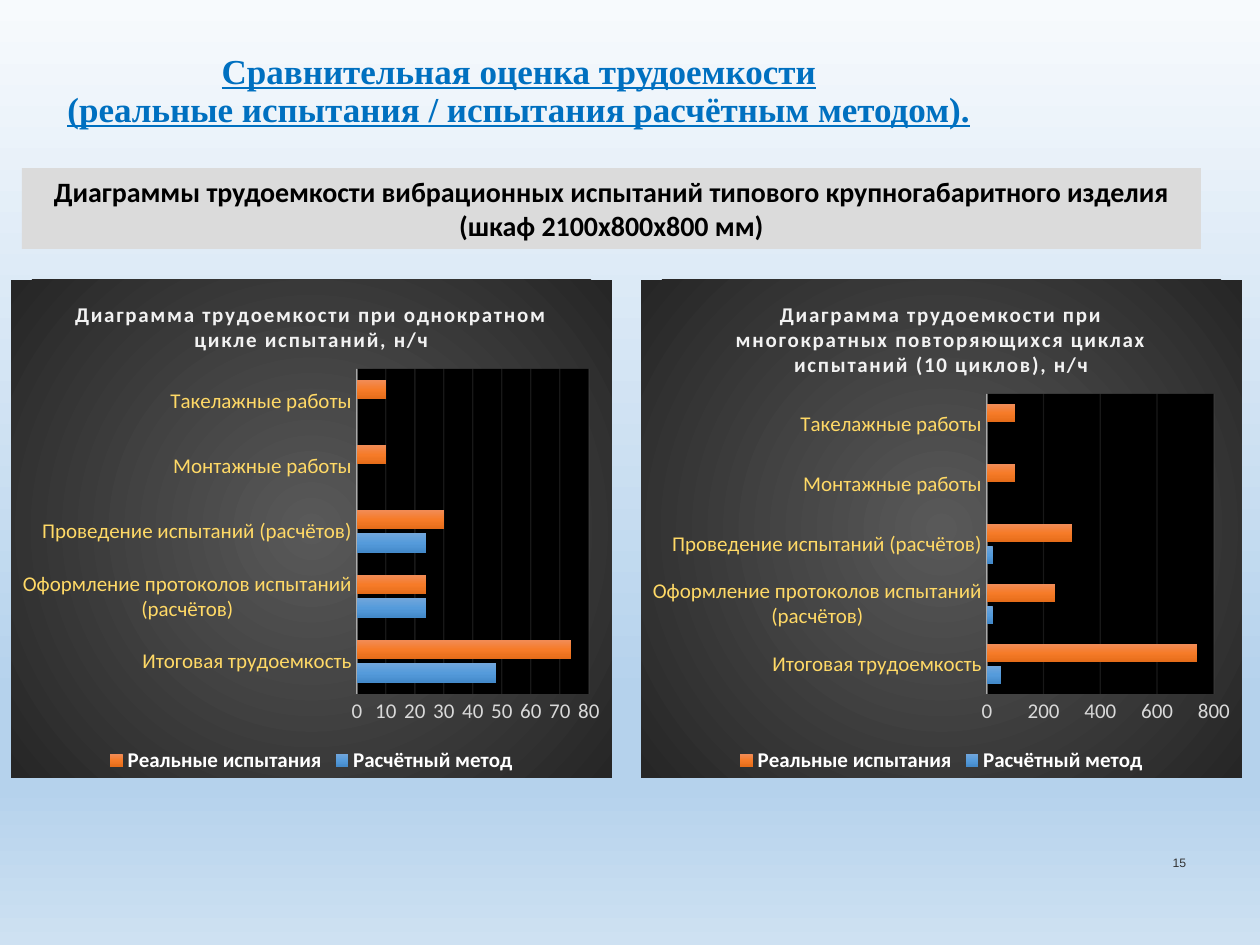
from lxml import etree
from pptx import Presentation
from pptx.chart.data import CategoryChartData
from pptx.dml.color import RGBColor
from pptx.enum.chart import XL_CHART_TYPE, XL_LEGEND_POSITION, XL_TICK_MARK
from pptx.enum.shapes import MSO_SHAPE
from pptx.enum.text import MSO_ANCHOR, PP_ALIGN
from pptx.oxml import parse_xml
from pptx.oxml.ns import nsdecls, qn
from pptx.util import Pt

PX = 7257.14  # EMU per px, 126 px to the inch
BAR = XL_CHART_TYPE.BAR_CLUSTERED
BOTTOM = XL_LEGEND_POSITION.BOTTOM
NO_TICK = XL_TICK_MARK.NONE
CENTER, RIGHT = PP_ALIGN.CENTER, PP_ALIGN.RIGHT
color = RGBColor.from_string


def box(*lengths):
    return [round(length * PX) for length in lengths]


def set_gradient(parent, stops, shade):
    """Replace the solid fill of a properties element with a gradient."""
    stop_xml = "".join(
        f'<a:gs pos="{position * 1000}"><a:srgbClr val="{value}"/></a:gs>'
        for position, value in stops)
    gradient = parse_xml(f'<a:gradFill {nsdecls("a")} rotWithShape="1">'
                         f'<a:gsLst>{stop_xml}</a:gsLst>{shade}</a:gradFill>')
    parent.replace(parent.find(qn("a:solidFill")), gradient)


DOWN = '<a:lin ang="5400000" scaled="0"/>'
RADIAL = ('<a:path path="circle"><a:fillToRect l="50000" t="50000" '
          'r="50000" b="50000"/></a:path>')

presentation = Presentation()
presentation.slide_width, presentation.slide_height = box(1260, 945)
slide = presentation.slides.add_slide(presentation.slide_layouts[5])

# Background
slide.background.fill.solid()
slide.background.fill.fore_color.rgb = color("B5D2EC")
set_gradient(slide.element.find(".//" + qn("p:bgPr")),
             [(0, "F7FAFD"), (74, "B5D2EC"), (83, "B5D2EC"), (100, "CEE1F2")], DOWN)

# Title
title = slide.shapes.title
title.left, title.top, title.width, title.height = box(30, 50, 978, 117)
frame = title.text_frame
frame.word_wrap = True
frame.vertical_anchor = MSO_ANCHOR.TOP
frame.margin_left = frame.margin_right = frame.margin_bottom = 0
frame.margin_top = box(4)[0]
paragraph = frame.paragraphs[0]
paragraph.alignment = CENTER
paragraph.line_spacing = 0.9
for index, line in enumerate(["Сравнительная оценка трудоемкости",
                              "(реальные испытания / испытания расчётным методом)."]):
    if index:
        paragraph.add_line_break()
    run = paragraph.add_run()
    run.text = line
    run.font.name, run.font.size = "Times New Roman", Pt(20)
    run.font.bold = run.font.underline = True
    run.font.color.rgb = color("0070C0")

# Subtitle band
band = slide.shapes.add_shape(MSO_SHAPE.RECTANGLE, *box(22, 168, 1179, 81))
band.shadow.inherit = False
band.fill.solid()
band.fill.fore_color.rgb = color("DBDBDB")
band.line.fill.background()
paragraph = band.text_frame.paragraphs[0]
paragraph.alignment = CENTER
run = paragraph.add_run()
run.text = ("Диаграммы трудоемкости вибрационных испытаний типового "
            "крупногабаритного изделия (шкаф 2100x800x800 мм)")
run.font.name, run.font.size, run.font.bold = "Calibri", Pt(16), True
run.font.color.rgb = color("000000")

# Charts
CHART_WIDTH, CHART_HEIGHT = 601, 498
categories = ["Итоговая трудоемкость", "Оформление протоколов испытаний (расчётов)",
              "Проведение испытаний (расчётов)", "Монтажные работы",
              "Такелажные работы"]
series_stops = {
    "Расчётный метод": [(0, "71A6DB"), (50, "559BDB"), (100, "448ACA")],
    "Реальные испытания": [(0, "F18C57"), (50, "F67B28"), (100, "E56C19")],
}
# left, title, axis maximum, axis step, plot area inside the chart, values
charts = [
    (11, "Диаграмма трудоемкости при однократном цикле испытаний, н/ч",
     80, 10, (346, 89, 232, 325),
     [(48, 24, 24, 0, 0), (74, 24, 30, 10, 10)]),
    (641, "Диаграмма трудоемкости при многократных повторяющихся циклах "
     "испытаний (10 циклов), н/ч",
     800, 200, (346, 114, 227, 300),
     [(50, 20, 20, 0, 0), (740, 240, 300, 100, 100)]),
]
for left, heading, maximum, step, plot_box, values in charts:
    data = CategoryChartData()
    data.categories = categories
    for name, numbers in zip(series_stops, values):
        data.add_series(name, numbers)
    chart = slide.shapes.add_chart(
        BAR, *box(left, 280, CHART_WIDTH, CHART_HEIGHT), data).chart
    chart.font.name, chart.font.size = "Calibri", Pt(10)

    # Heading
    chart.has_title = True
    chart.chart_title.include_in_layout = False
    run = chart.chart_title.text_frame.paragraphs[0].add_run()
    run.text = heading
    run.font.name, run.font.size, run.font.bold = "Calibri", Pt(12), True
    run.font.color.rgb = color("F2F2F2")
    run.font._element.set("spc", "100")

    # Legend
    chart.has_legend = True
    chart.legend.position = BOTTOM
    chart.legend.include_in_layout = False
    legend_font = chart.legend.font
    legend_font.name, legend_font.size, legend_font.bold = "Calibri", Pt(12), True
    legend_font.color.rgb = color("FFFFFF")

    # Bars
    plot = chart.plots[0]
    plot.gap_width, plot.overlap = 115, -20
    plot.vary_by_categories = False
    for series in plot.series:
        series.format.fill.solid()
        series.format.fill.fore_color.rgb = color("000000")
        set_gradient(series.format._element.spPr if hasattr(series.format._element, "spPr")
                     else series.format._element, series_stops[series.name], DOWN)

    # Axes
    category_axis, value_axis = chart.category_axis, chart.value_axis
    for axis, text_color in ((category_axis, "FFD966"), (value_axis, "D9D9D9")):
        axis.major_tick_mark = axis.minor_tick_mark = NO_TICK
        font = axis.tick_labels.font
        font.name, font.size = "Calibri", Pt(12)
        font.color.rgb = color(text_color)
    value_axis.minimum_scale, value_axis.maximum_scale = 0, maximum
    value_axis.major_unit = step
    value_axis.has_major_gridlines = True
    value_axis.format.line.fill.background()
    for line, width, opacity in ((category_axis.format.line, 1, 54),
                                 (value_axis.major_gridlines.format.line, 0.75, 10)):
        line.width = Pt(width)
        line.color.rgb = color("F2F2F2")
    for owner, opacity in ((category_axis._element, 54),
                           (value_axis._element.find(qn("c:majorGridlines")), 10)):
        line_color = owner.find(f"{qn('c:spPr')}/{qn('a:ln')}//{qn('a:srgbClr')}")
        etree.SubElement(line_color, qn("a:alpha"), val=str(opacity * 1000))

    # Chart and plot area fills
    chart_fill, plot_fill = (parse_xml(
        f'<c:spPr {nsdecls("c", "a")}><a:solidFill><a:srgbClr val="000000"/>'
        '</a:solidFill><a:ln><a:noFill/></a:ln></c:spPr>') for _ in range(2))
    set_gradient(chart_fill, [(0, "595959"), (100, "262626")], RADIAL)
    chart.element.find(qn("c:txPr")).addprevious(chart_fill)
    plot_area = chart.element.find(".//" + qn("c:plotArea"))
    plot_area.append(plot_fill)

    # Plot area position, as shares of the chart
    for old_layout in plot_area.findall(qn("c:layout")):
        plot_area.remove(old_layout)
    sizes = (CHART_WIDTH, CHART_HEIGHT) * 2
    shares = "".join(f'<c:{key} val="{length / size:.4f}"/>'
                     for key, length, size in zip("xywh", plot_box, sizes))
    plot_area.insert(0, parse_xml(
        f'<c:layout {nsdecls("c")}><c:manualLayout><c:layoutTarget val="inner"/>'
        f'<c:xMode val="edge"/><c:yMode val="edge"/>{shares}'
        '</c:manualLayout></c:layout>'))

# Slide number
number = slide.shapes.add_textbox(*box(1106, 850, 80, 20))
frame = number.text_frame
frame.word_wrap = True
frame.vertical_anchor = MSO_ANCHOR.BOTTOM
frame.margin_left = frame.margin_right = frame.margin_top = frame.margin_bottom = 0
paragraph = frame.paragraphs[0]
paragraph.alignment = RIGHT
run = paragraph.add_run()
run.text = "15"
run.font.name, run.font.size = "Arial", Pt(7)
run.font.color.rgb = color("333333")

presentation.save("out.pptx")
